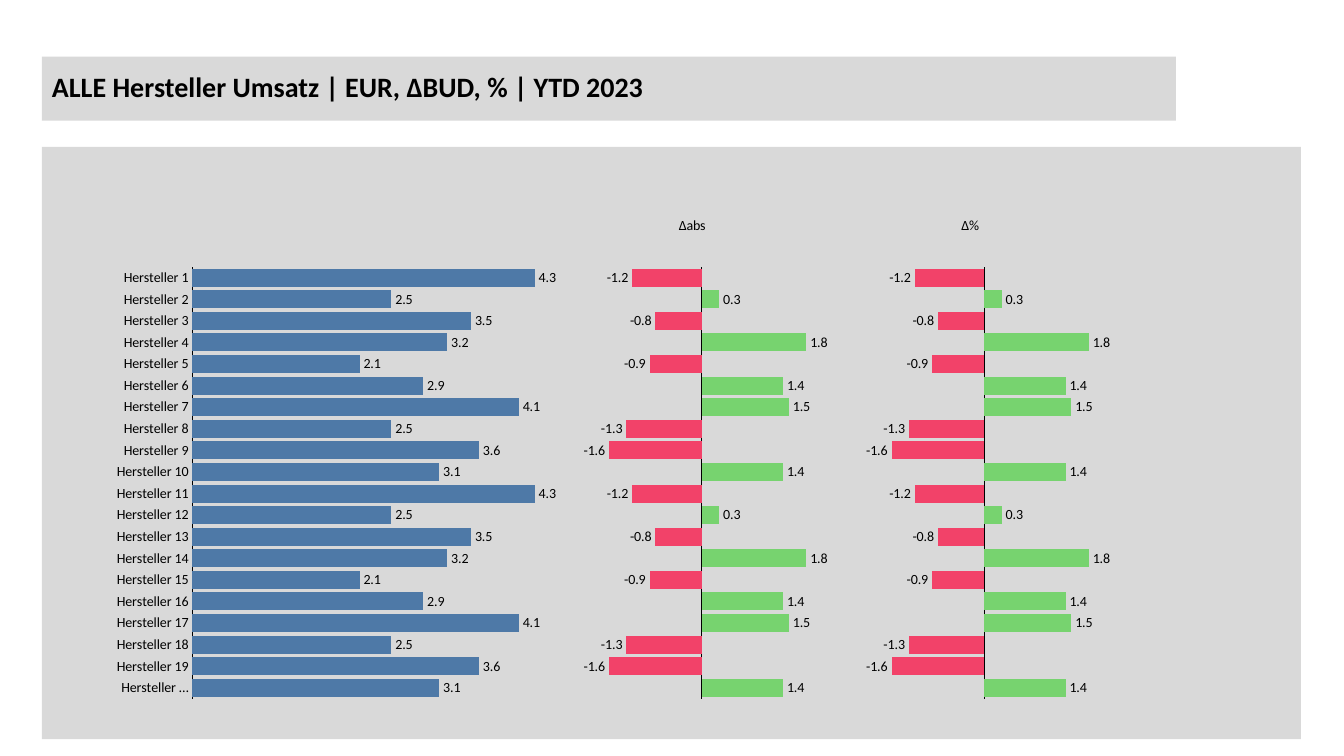
from dataclasses import dataclass

from pptx import Presentation
from pptx.chart.data import CategoryChartData
from pptx.dml.color import RGBColor
from pptx.enum.chart import XL_CHART_TYPE, XL_LABEL_POSITION, XL_TICK_LABEL_POSITION, XL_TICK_MARK
from pptx.enum.shapes import MSO_SHAPE
from pptx.enum.text import MSO_ANCHOR, PP_ALIGN
from pptx.oxml import parse_xml
from pptx.oxml.ns import nsdecls, qn
from pptx.util import Pt

EMU_PER_PX = 9525


def px(length):
    return length * EMU_PER_PX


@dataclass(frozen=True)
class Theme:
    panel: RGBColor = RGBColor(0xD9, 0xD9, 0xD9)
    ink: RGBColor = RGBColor(0, 0, 0)
    revenue: RGBColor = RGBColor(0x4E, 0x79, 0xA7)
    gain: RGBColor = RGBColor(0x77, 0xD3, 0x6F)
    loss: RGBColor = RGBColor(0xF2, 0x42, 0x69)
    font: str = "Calibri"
    headline_size: int = 20
    chart_size: int = 10


def place(element, target, **fractions):
    """Give a chart part a manual layout in fractions of the chart area."""
    layout = element.find(qn("c:layout"))
    if layout is None:
        layout = parse_xml(f"<c:layout {nsdecls('c')}/>")
        element.insert(0, layout)
    inner = '<c:layoutTarget val="inner"/>' if target == "inner" else ""
    modes = '<c:xMode val="edge"/><c:yMode val="edge"/>'
    values = "".join(f'<c:{key} val="{value}"/>' for key, value in fractions.items())
    layout.append(parse_xml(
        f"<c:manualLayout {nsdecls('c')}>{inner}{modes}{values}</c:manualLayout>"))


class ReportSlide:
    def __init__(self, slide, theme):
        self.slide = slide
        self.theme = theme

    def style_font(self, font, size, bold=False):
        font.name = self.theme.font
        font.size = Pt(size)
        font.bold = bold
        font.color.rgb = self.theme.ink

    def panel(self, left, top, width, height):
        panel = self.slide.shapes.add_shape(
            MSO_SHAPE.RECTANGLE, px(left), px(top), px(width), px(height))
        panel.shadow.inherit = False
        panel.fill.solid()
        panel.fill.fore_color.rgb = self.theme.panel
        panel.line.fill.background()
        return panel

    def headline(self, text, left, top, width, height):
        frame = self.panel(left, top, width, height).text_frame
        frame.word_wrap = True
        frame.vertical_anchor = MSO_ANCHOR.MIDDLE
        frame.text = text
        paragraph = frame.paragraphs[0]
        paragraph.alignment = PP_ALIGN.LEFT
        paragraph.line_spacing = 0.9
        self.style_font(paragraph.runs[0].font, self.theme.headline_size, bold=True)

    def bar_chart(self, box, categories, values, color, value_range, plot_x, plot_width):
        data = CategoryChartData(number_format="#,##0.0")
        data.categories = categories
        data.add_series("Series 1", values)
        chart = self.slide.shapes.add_chart(
            XL_CHART_TYPE.BAR_CLUSTERED, *map(px, box), data).chart
        chart.has_legend = False
        chart.has_title = False
        self.style_font(chart.font, self.theme.chart_size)
        chart.element.chart.addnext(parse_xml(
            f"<c:spPr {nsdecls('c', 'a')}><a:noFill/><a:ln><a:noFill/></a:ln></c:spPr>"))
        place(chart.element.chart.plotArea, "inner",
              x=plot_x, y=0.138, w=plot_width, h=0.797)

        value_axis = chart.value_axis
        value_axis.minimum_scale, value_axis.maximum_scale = value_range
        value_axis.has_major_gridlines = False
        value_axis.visible = False

        category_axis = chart.category_axis
        category_axis.reverse_order = True
        category_axis.major_tick_mark = XL_TICK_MARK.NONE
        category_axis.minor_tick_mark = XL_TICK_MARK.NONE
        category_axis.format.line.color.rgb = self.theme.ink
        category_axis.format.line.width = Pt(0.75)
        self.style_font(category_axis.tick_labels.font, self.theme.chart_size)

        plot = chart.plots[0]
        plot.gap_width = 20
        plot.vary_by_categories = False
        series = plot.series[0]
        series.invert_if_negative = False
        series.format.fill.solid()
        series.format.fill.fore_color.rgb = color

        labels = series.data_labels
        labels.show_value = True
        labels.number_format = "#,##0.0"
        labels.number_format_is_linked = False
        labels.position = XL_LABEL_POSITION.OUTSIDE_END
        self.style_font(labels.font, self.theme.chart_size)
        return chart

    def delta_chart(self, title, box, categories, values):
        """Add a variance chart: gains to the right, losses to the left of zero."""
        chart = self.bar_chart(box, categories, values, self.theme.gain,
                               (-2, 2), 0.092, 0.816)
        chart.category_axis.tick_label_position = XL_TICK_LABEL_POSITION.NONE
        series = chart.plots[0].series[0]
        for index, value in enumerate(values):
            if value < 0:
                fill = series.points[index].format.fill
                fill.solid()
                fill.fore_color.rgb = self.theme.loss

        heading = chart.chart_title
        heading.text_frame.text = title
        self.style_font(heading.text_frame.paragraphs[0].runs[0].font,
                        self.theme.chart_size)
        place(heading.element, "outer", x=0.41, y=0.04)


def main():
    presentation = Presentation()
    presentation.slide_width, presentation.slide_height = px(1280), px(720)
    theme = Theme()
    report = ReportSlide(
        presentation.slides.add_slide(presentation.slide_layouts[6]), theme)

    manufacturers = [f"Hersteller {number}" for number in range(1, 20)] + ["Hersteller …"]
    revenue = [4.3, 2.5, 3.5, 3.2, 2.1, 2.9, 4.1, 2.5, 3.6, 3.1] * 2
    deltas = [-1.2, 0.3, -0.8, 1.8, -0.9, 1.4, 1.5, -1.3, -1.6, 1.4] * 2

    report.panel(40, 140, 1199, 564)
    report.headline("ALLE Hersteller Umsatz | EUR, ΔBUD, % | YTD 2023", 40, 54, 1080, 61)

    chart_top, chart_height = 183, 516
    report.bar_chart((55, chart_top, 548, chart_height), manufacturers, revenue,
                     theme.revenue, (0, 5), 0.234, 0.692)
    for title, left in (("∆abs", 533), ("∆%", 802)):
        report.delta_chart(title, (left, chart_top, 271, chart_height),
                           manufacturers, deltas)

    presentation.save("out.pptx")


if __name__ == "__main__":
    main()
